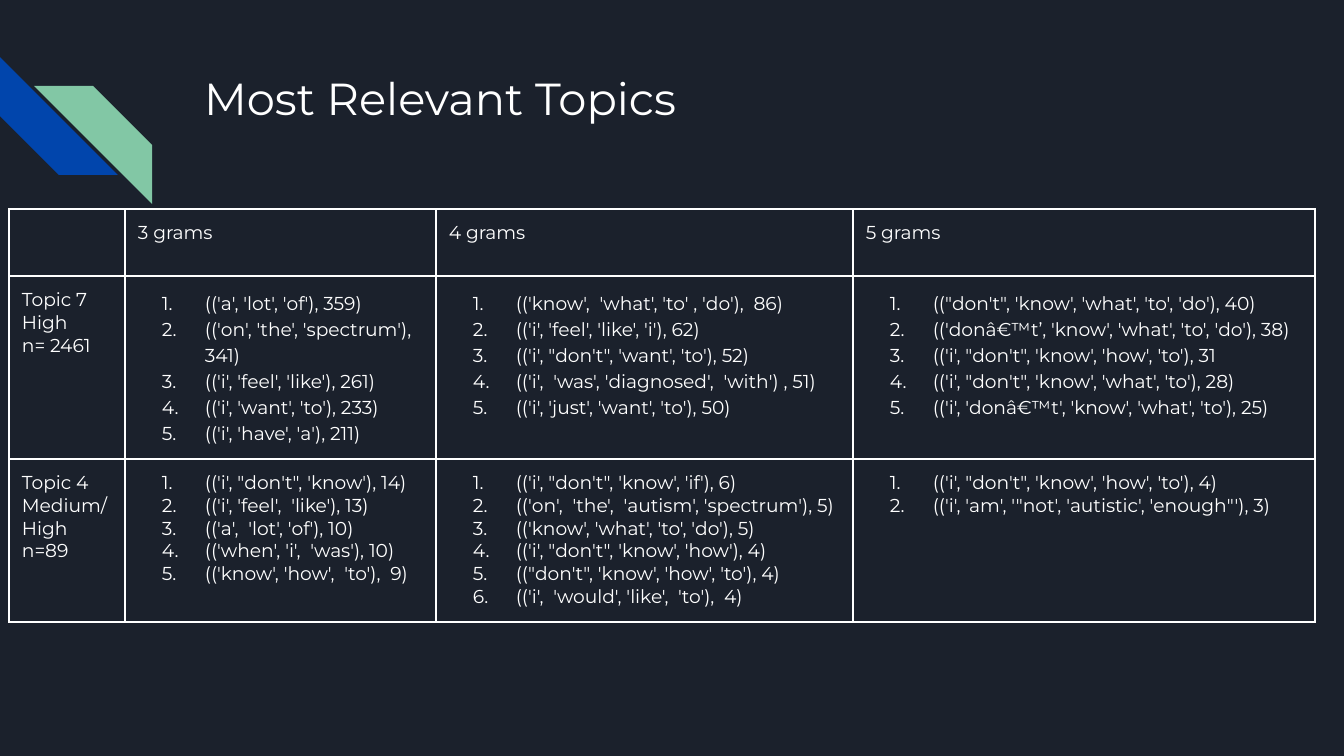
from lxml import etree
from pptx import Presentation
from pptx.dml.color import RGBColor
from pptx.enum.shapes import MSO_SHAPE
from pptx.enum.text import MSO_ANCHOR, PP_ALIGN
from pptx.oxml import parse_xml
from pptx.oxml.ns import nsdecls
from pptx.util import Pt

STRIPE = MSO_SHAPE.DIAGONAL_STRIPE
TOP = MSO_ANCHOR.TOP
LEFT = PP_ALIGN.LEFT
FONT = "Montserrat"
WHITE = "FFFFFF"
INSET = 13
EMU_PER_PX = 914400 / 134.4


def px(length):
    return round(length * EMU_PER_PX)


def color(value):
    return RGBColor.from_string(value)


headings = ["", "3 grams", "4 grams", "5 grams"]
topics = [
    (1.15, "Topic 7\nHigh\nn= 2461", [
        """(('a', 'lot', 'of'), 359)
(('on', 'the', 'spectrum'), 341)
(('i', 'feel', 'like'), 261)
(('i', 'want', 'to'), 233)
(('i', 'have', 'a'), 211)""",
        """(('know',  'what', 'to' , 'do'),  86)
(('i', 'feel', 'like', 'i'), 62)
(('i', "don't", 'want', 'to'), 52)
(('i',  'was', 'diagnosed',  'with') , 51)
(('i', 'just', 'want', 'to'), 50)""",
        """(("don't", 'know', 'what', 'to', 'do'), 40)
(('donâ€™t’, 'know', 'what', 'to', 'do'), 38)
(('i', "don't", 'know', 'how', 'to'), 31
(('i', "don't", 'know', 'what', 'to'), 28)
(('i', 'donâ€™t', 'know', 'what', 'to'), 25)""",
    ]),
    (1.0, "Topic 4\nMedium/High\nn=89", [
        """(('i', "don't", 'know'), 14)
(('i', 'feel',  'like'), 13)
(('a',  'lot', 'of'), 10)
(('when', 'i',  'was'), 10)
(('know', 'how',  'to'),  9)""",
        """(('i', "don't", 'know', 'if'), 6)
(('on',  'the',  'autism', 'spectrum'), 5)
(('know', 'what', 'to', 'do'), 5)
(('i', "don't", 'know', 'how'), 4)
(("don't", 'know', 'how', 'to'), 4)
(('i',  'would', 'like',  'to'),  4)""",
        """(('i', "don't", 'know', 'how', 'to'), 4)
(('i', 'am', '"not', 'autistic', 'enough"'), 3)""",
    ]),
]
column_widths = [116, 311, 417, 462]
row_heights = [64, 183, 163]

deck = Presentation()
deck.slide_width = px(1344)
deck.slide_height = px(756)
page = deck.slides.add_slide(deck.slide_layouts[5])
page.background.fill.solid()
page.background.fill.fore_color.rgb = color("1B212C")

for left, top, rotation, fill in [(0, 57, 270, "0145AC"), (34, 86, 90, "82C7A5")]:
    stripe = page.shapes.add_shape(STRIPE, px(left), px(top), px(118), px(118))
    stripe.rotation = rotation
    stripe.adjustments[0] = 0.5
    stripe.shadow.inherit = False
    stripe.fill.solid()
    stripe.fill.fore_color.rgb = color(fill)
    stripe.line.fill.background()

title = page.shapes.title
title.left, title.top, title.width, title.height = px(191), px(58), px(1035), px(134)
frame = title.text_frame
frame.word_wrap = True
frame.vertical_anchor = TOP
frame.margin_left = frame.margin_right = px(INSET)
frame.margin_top = frame.margin_bottom = px(INSET)
para = frame.paragraphs[0]
para.alignment = LEFT
span = para.add_run()
span.text = "Most Relevant Topics"
span.font.size = Pt(24)
span.font.name = FONT
span.font.color.rgb = color(WHITE)

table = page.shapes.add_table(
    len(row_heights), len(column_widths), px(9), px(209),
    px(sum(column_widths)), px(sum(row_heights))).table
table.first_row = False
table.horz_banding = False
for column, width in zip(table.columns, column_widths):
    column.width = px(width)
for row, height in zip(table.rows, row_heights):
    row.height = px(height)

for cell in table.iter_cells():
    cell.margin_left = cell.margin_right = px(INSET)
    cell.margin_top = cell.margin_bottom = px(INSET)
    cell.vertical_anchor = TOP
    cell.fill.background()
    properties = cell._tc.get_or_add_tcPr()
    for index, side in enumerate(["lnL", "lnR", "lnT", "lnB"]):
        properties.insert(index, parse_xml(
            f'<a:{side} {nsdecls("a")} w="{Pt(0.75)}"><a:solidFill>'
            f'<a:srgbClr val="{WHITE}"/></a:solidFill></a:{side}>'))

entries = [(0, column, text, None) for column, text in enumerate(headings) if text]
for row, (spacing, label, grams) in enumerate(topics, 1):
    entries.append((row, 0, label, None))
    entries += [(row, column, text, spacing) for column, text in enumerate(grams, 1)]

for row, column, text, spacing in entries:
    frame = table.cell(row, column).text_frame
    para = frame.paragraphs[0]
    for index, line in enumerate(text.split("\n")):
        if index and spacing:
            para = frame.add_paragraph()
        elif index:
            para.add_line_break()
        if spacing:
            para.line_spacing = spacing
            numbering = para._p.get_or_add_pPr()
            numbering.set("marL", str(px(67)))
            numbering.set("indent", str(px(-43)))
            bullet = etree.fromstring(
                f'<a:pPr {nsdecls("a")}><a:buClr><a:srgbClr val="{WHITE}"/></a:buClr>'
                f'<a:buSzPts val="1000"/><a:buFont typeface="{FONT}"/>'
                '<a:buAutoNum type="arabicPeriod"/></a:pPr>')
            numbering.extend(list(bullet))
        span = para.add_run()
        span.text = line
        span.font.size = Pt(10)
        span.font.name = FONT
        span.font.color.rgb = color(WHITE)

deck.save("out.pptx")
